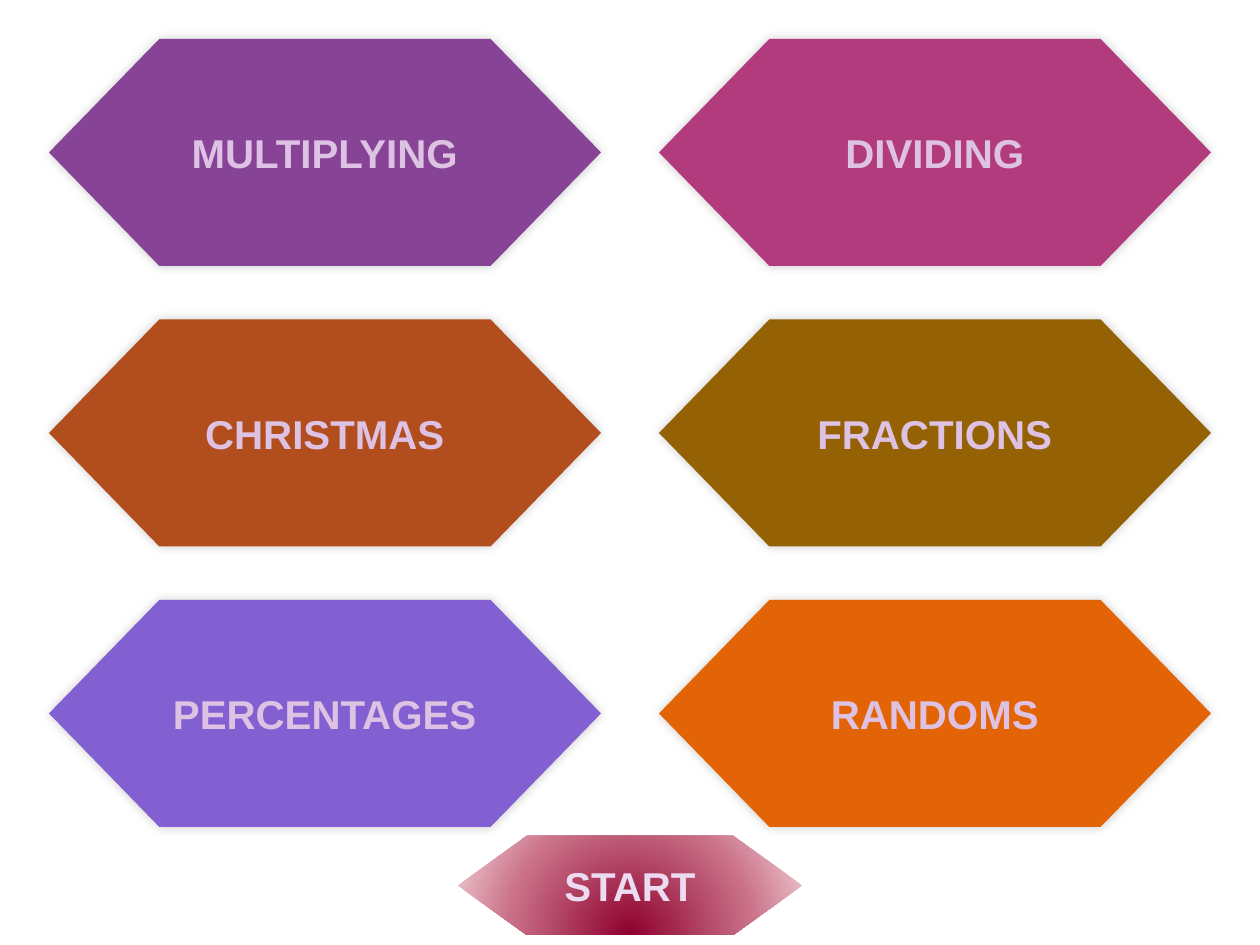
from lxml import etree
from pptx import Presentation, util as u
from pptx.dml.color import RGBColor
from pptx.enum import shapes, text
from pptx.oxml import parse_xml
from pptx.oxml.ns import nsdecls, qn

PX = 914400 / 126
TOPICS = [
    [("MULTIPLYING", "874396"), ("DIVIDING", "B23B7E")],
    [("CHRISTMAS", "B24D1D"), ("FRACTIONS", "946204")],
    [("PERCENTAGES", "8260D1"), ("RANDOMS", "E36406")],
]
START_STOPS = [(0, "8E002E"), (68, "CA7189"), (100, "E7B8C2")]


def px(n):
    """Turn px into EMU."""
    return u.Emu(round(n * PX))


def rgb(value):
    """Turn a hex string into a colour."""
    return RGBColor.from_string(value)


def add_text(sp, words, size=23, color="DEC2E4", bold=True, font="Arial"):
    """Put one centred line of text in a shape."""
    tf = sp.text_frame
    tf.word_wrap = True
    tf.margin_left = tf.margin_right = 0
    tf.vertical_anchor = text.MSO_ANCHOR.MIDDLE
    p = tf.paragraphs[0]
    p.alignment = text.PP_ALIGN.CENTER
    r = p.add_run()
    r.text = words
    r.font.name, r.font.size, r.font.bold = font, u.Pt(size), bold
    r.font.color.rgb = rgb(color)


def add_hexagon(s, box, words, fill, **fmt):
    """Add a labelled hexagon without outline or shadow."""
    sp = s.shapes.add_shape(shapes.MSO_SHAPE.FLOWCHART_PREPARATION, *map(px, box))
    sp.shadow.inherit = False
    sp.fill.solid()
    sp.fill.fore_color.rgb = rgb(fill)
    sp.line.fill.background()
    add_text(sp, words, **fmt)
    return sp


def add_glow(sp):
    """Give a shape a soft, centred shadow."""
    effects = sp._element.spPr.find(qn("a:effectLst"))
    shadow = etree.SubElement(effects, qn("a:outerShdw"), blurRad=str(u.Pt(6)),
                              dist="0", dir="18900000", rotWithShape="0")
    color = etree.SubElement(shadow, qn("a:srgbClr"), val="000000")
    etree.SubElement(color, qn("a:alpha"), val="20000")


def add_radial_fill(sp, stops):
    """Replace a solid fill with a circular gradient centred below the shape."""
    stop_xml = "".join(f'<a:gs pos="{pos * 1000}"><a:srgbClr val="{color}"/></a:gs>'
                       for pos, color in stops)
    grad = parse_xml(
        f'<a:gradFill {nsdecls("a")} rotWithShape="1"><a:gsLst>{stop_xml}</a:gsLst>'
        '<a:path path="circle"><a:fillToRect l="50000" t="130000" r="50000" b="-30000"/>'
        '</a:path></a:gradFill>')
    sp_pr = sp._element.spPr
    sp_pr.replace(sp_pr.find(qn("a:solidFill")), grad)


def add_topics(s, box, rows, cell_w, cell_h):
    """Spread the topic hexagons evenly over a box."""
    left, top, width, height = box
    step_x = (width - cell_w) / (len(rows[0]) - 1)
    step_y = (height - cell_h) / (len(rows) - 1)
    for i, row in enumerate(rows):
        for j, (words, fill) in enumerate(row):
            cell = (left + j * step_x, top + i * step_y, cell_w, cell_h)
            add_glow(add_hexagon(s, cell, words, fill))


def add_start(s, box):
    """Add the start button."""
    sp = add_hexagon(s, box, "START", START_STOPS[0][1], color="ECDBF1")
    add_radial_fill(sp, START_STOPS)


def main():
    """Build and save the slide."""
    prs = Presentation()
    prs.slide_width, prs.slide_height = px(1260), px(945)
    s = prs.slides.add_slide(prs.slide_layouts[6])
    add_topics(s, (49, 39, 1162, 788), TOPICS, 552, 227)
    add_start(s, (458, 836, 344, 99))
    prs.save("out.pptx")


if __name__ == "__main__":
    main()
